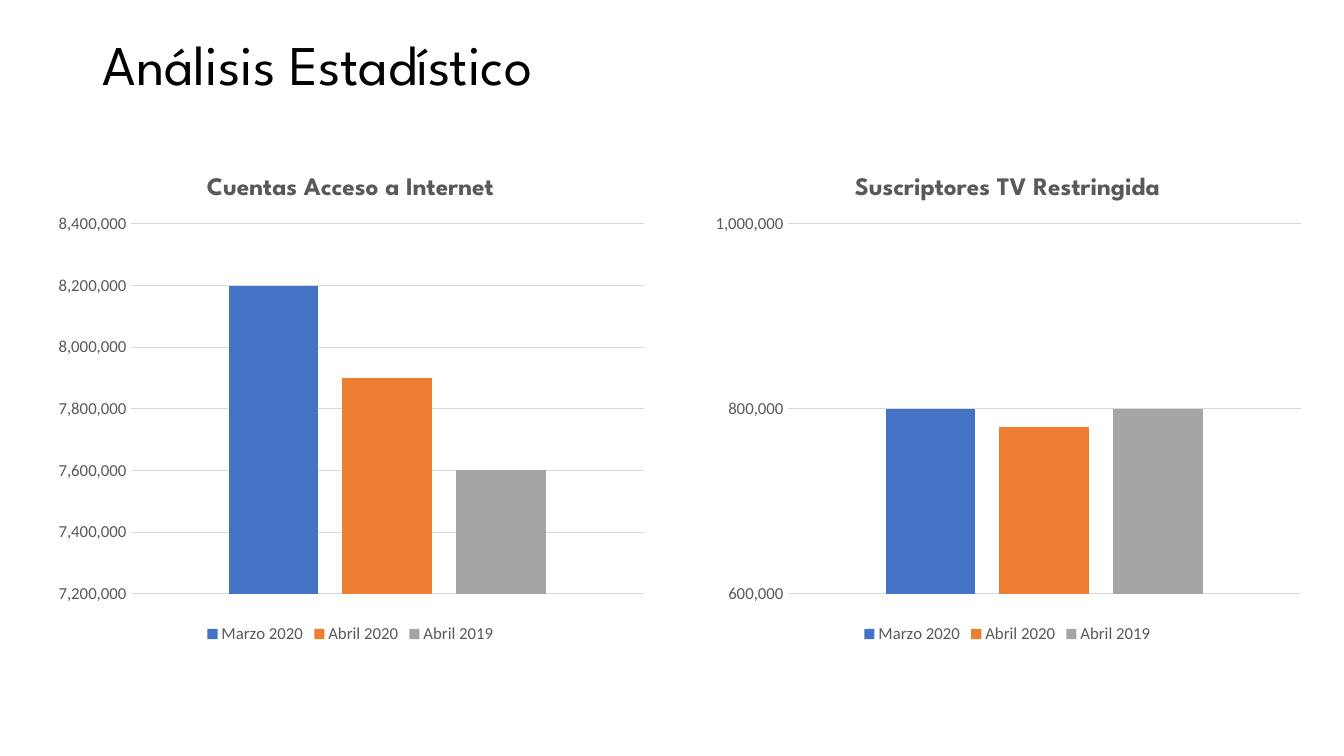
"""Build a statistics slide with two clustered column charts."""
from lxml.etree import SubElement
from pptx import Presentation
from pptx.chart.data import CategoryChartData
from pptx.dml.color import RGBColor
from pptx.enum.chart import XL_CHART_TYPE, XL_LEGEND_POSITION, XL_TICK_MARK
from pptx.enum.text import MSO_ANCHOR
from pptx.oxml.ns import qn
from pptx.util import Emu, Pt

COLORS = {
    "title": "000000",
    "label": "595959",
    "grid": "D9D9D9",
    "Marzo 2020": "4472C4",
    "Abril 2020": "ED7D31",
    "Abril 2019": "A5A5A5",
}
PERIODS = ["Marzo 2020", "Abril 2020", "Abril 2019"]
CHARTS = [
    ("Cuentas Acceso a Internet", 45, [8200000, 7900000, 7600000], 7200000, 8400000),
    ("Suscriptores TV Restringida", 702, [800000, 780000, 800000], 600000, 1000000),
]
PLOT_LAYOUT = {
    "layoutTarget": "inner", "xMode": "edge", "yMode": "edge",
    "x": "0.14", "y": "0.14", "w": "0.84", "h": "0.75",
}


def px(length):
    """Turn pixels into EMU."""
    return Emu(round(length * 914400 / 100.8))


def style(font, name, size, color, bold=False):
    """Set the look of a font."""
    font.name = name
    font.size = Pt(size)
    font.bold = bold
    font.color.rgb = RGBColor.from_string(COLORS[color])


deck = Presentation()
deck.slide_width = px(1344)
deck.slide_height = px(756)
page = deck.slides.add_slide(deck.slide_layouts[6])

box = page.shapes.add_textbox(px(93), px(21), px(621), px(93))
frame = box.text_frame
frame.word_wrap = True
frame.vertical_anchor = MSO_ANCHOR.MIDDLE
frame.text = "Análisis Estadístico"
paragraph = frame.paragraphs[0]
paragraph.line_spacing = 0.9
style(paragraph.runs[0].font, "League Spartan", 40, "title")

for heading, left, values, low, high in CHARTS:
    data = CategoryChartData(number_format="#,##0")
    data.categories = ["1"]
    for period, value in zip(PERIODS, values):
        data.add_series(period, [value])
    chart = page.shapes.add_chart(
        XL_CHART_TYPE.COLUMN_CLUSTERED, px(left), px(155), px(611), px(493), data
    ).chart
    style(chart.font, "Calibri", 12, "label")

    chart.has_title = True
    caption = chart.chart_title.text_frame
    caption.text = heading
    style(caption.paragraphs[0].runs[0].font, "League Spartan", 18, "label", True)
    chart.chart_title.include_in_layout = False

    chart.has_legend = True
    chart.legend.position = XL_LEGEND_POSITION.BOTTOM
    chart.legend.include_in_layout = False
    style(chart.legend.font, "Calibri", 12, "label")

    chart.category_axis.visible = False
    axis = chart.value_axis
    axis.minimum_scale = low
    axis.maximum_scale = high
    axis.major_unit = 200000
    axis.major_tick_mark = XL_TICK_MARK.NONE
    axis.format.line.fill.background()
    axis.tick_labels.number_format = "#,##0"
    axis.tick_labels.number_format_is_linked = False
    style(axis.tick_labels.font, "Calibri", 12, "label")
    grid = axis.major_gridlines.format.line
    grid.width = Pt(0.75)
    grid.color.rgb = RGBColor.from_string(COLORS["grid"])

    plot = chart.plots[0]
    plot.gap_width = 219
    plot.overlap = -27
    plot.vary_by_categories = False
    for series in plot.series:
        series.format.fill.solid()
        series.format.fill.fore_color.rgb = RGBColor.from_string(COLORS[series.name])

    area = chart.element.find(".//" + qn("c:plotArea"))
    layout = area.find(qn("c:layout"))
    if layout is None:
        layout = SubElement(area, qn("c:layout"))
        area.insert(0, layout)
    manual = SubElement(layout, qn("c:manualLayout"))
    for key, value in PLOT_LAYOUT.items():
        SubElement(manual, qn("c:" + key)).set("val", value)

deck.save("out.pptx")
